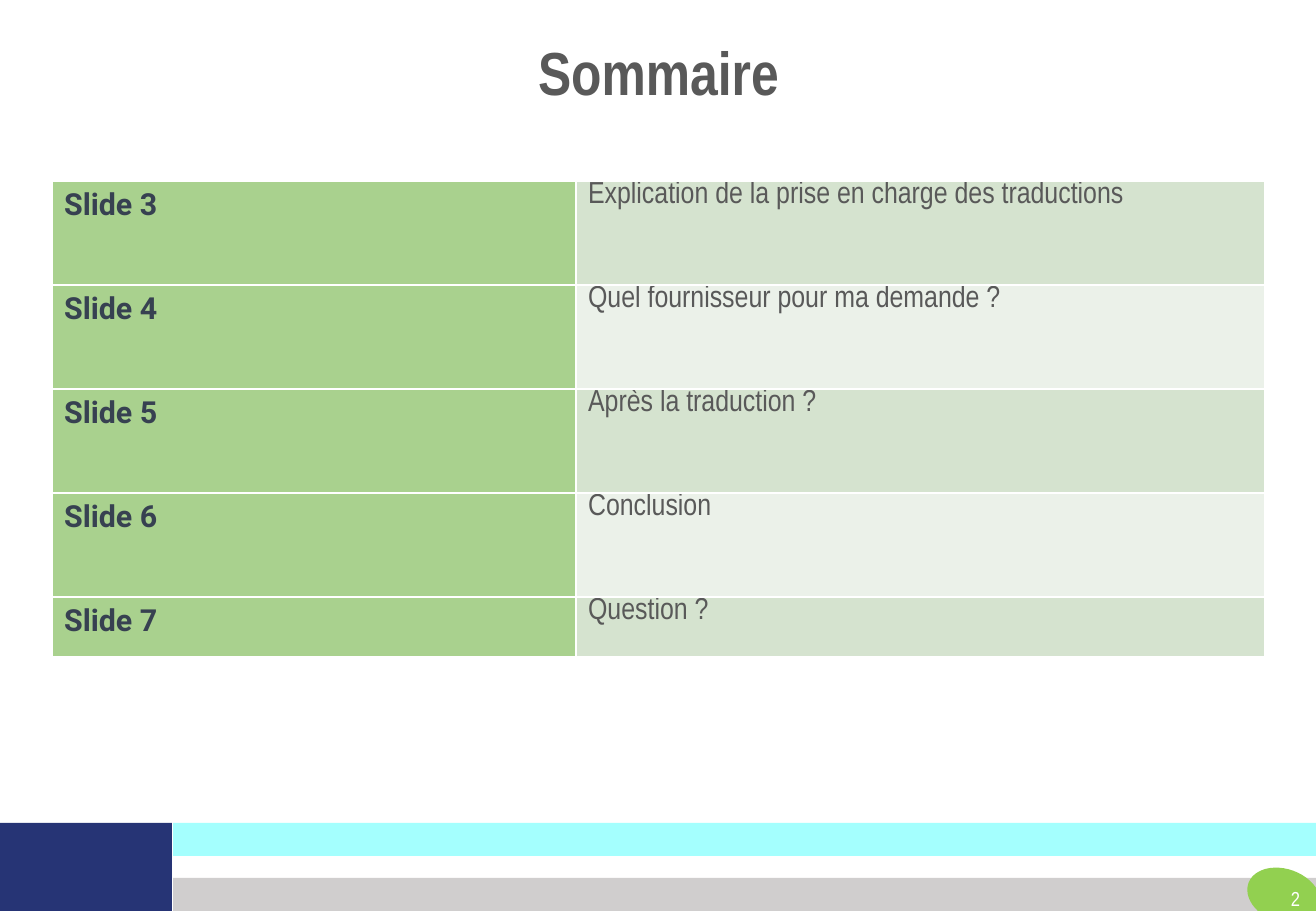
import pptx
import pptx.dml.color
import pptx.enum.shapes
import pptx.enum.text
import pptx.oxml
import pptx.oxml.ns
import pptx.util

RGBColor = pptx.dml.color.RGBColor
MSO_SHAPE = pptx.enum.shapes.MSO_SHAPE
PP_ALIGN = pptx.enum.text.PP_ALIGN
Pt = pptx.util.Pt

PX = 7526  # EMU per pixel, 121.5 pixels to the inch

WHITE = RGBColor(0xFF, 0xFF, 0xFF)
GREY_TEXT = RGBColor(0x59, 0x59, 0x59)
SLATE_TEXT = RGBColor(0x37, 0x41, 0x51)
GREY_BAND = RGBColor(0xD0, 0xCE, 0xCE)
CYAN_BAND = RGBColor(0xA4, 0xFF, 0xFE)
NAVY = RGBColor(0x26, 0x34, 0x75)
LIME = RGBColor(0x92, 0xD0, 0x50)
LABEL_FILL = RGBColor(0xA9, 0xD1, 0x8E)
TOPIC_FILLS = [RGBColor(0xD5, 0xE3, 0xCF), RGBColor(0xEB, 0xF1, 0xE9)]

TOPICS = [
    "Explication de la prise en charge des traductions",
    "Quel fournisseur pour ma demande ?",
    "Après la traduction ?",
    "Conclusion",
    "Question ?",
]
FIRST_SLIDE = 3
COLUMN_WIDTHS = [524, 689]
ROW_HEIGHTS = [104, 104, 104, 104, 60]


def write(frame, text, font_name, size, color, bold=False, align=PP_ALIGN.LEFT):
    """Fill the first paragraph of a text frame and return it."""
    para = frame.paragraphs[0]
    para.text = text
    para.alignment = align
    para.font.name = font_name
    para.font.size = Pt(size)
    para.font.bold = bold
    para.font.color.rgb = color
    return para


def add_text_box(left, top, width, height):
    box = page.shapes.add_textbox(left * PX, top * PX, width * PX, height * PX)
    box.text_frame.word_wrap = True
    box.text_frame.vertical_anchor = pptx.enum.text.MSO_ANCHOR.MIDDLE
    return box.text_frame


deck = pptx.Presentation()
deck.slide_width = 1316 * PX
deck.slide_height = 911 * PX
page = deck.slides.add_slide(deck.slide_layouts[6])

# Footer decoration
for kind, left, top, width, height, color, angle in [
    (MSO_SHAPE.RECTANGLE, 173, 878, 1145, 33, GREY_BAND, 0),
    (MSO_SHAPE.RECTANGLE, 173, 823, 1145, 33, CYAN_BAND, 0),
    (MSO_SHAPE.OVAL, 1247, 870, 74, 52, LIME, 20),
    (MSO_SHAPE.RECTANGLE, -10, 823, 182, 90, NAVY, 0),
]:
    shape = page.shapes.add_shape(kind, left * PX, top * PX, width * PX, height * PX)
    shape.shadow.inherit = False
    shape.rotation = angle
    shape.fill.solid()
    shape.fill.fore_color.rgb = color
    if kind == MSO_SHAPE.OVAL:
        shape.line.color.rgb = color
        shape.line.width = Pt(1)
    else:
        shape.line.fill.background()

# Title and page number
title = write(add_text_box(11, 11, 1295, 129), "Sommaire", "Arial Narrow", 36,
              GREY_TEXT, True, PP_ALIGN.CENTER)
title.line_spacing = 0.9
write(add_text_box(1244, 874, 68, 49), "2", "Arial Narrow", 12, WHITE, align=PP_ALIGN.RIGHT)

# Table of contents
contents = page.shapes.add_table(
    len(TOPICS), 2, 52 * PX, 181 * PX, sum(COLUMN_WIDTHS) * PX, sum(ROW_HEIGHTS) * PX
).table
for column, width in zip(contents.columns, COLUMN_WIDTHS):
    column.width = width * PX
for row, height in zip(contents.rows, ROW_HEIGHTS):
    row.height = height * PX

for index, topic in enumerate(TOPICS):
    label_cell, topic_cell = contents.cell(index, 0), contents.cell(index, 1)
    topic_cell.margin_top = 0
    for cell, color in [(label_cell, LABEL_FILL), (topic_cell, TOPIC_FILLS[index % 2])]:
        for side in ("lnL", "lnR", "lnT", "lnB"):
            cell._tc.get_or_add_tcPr().append(pptx.oxml.parse_xml(
                f'<a:{side} {pptx.oxml.ns.nsdecls("a")} w="12700"><a:solidFill>'
                f'<a:srgbClr val="{WHITE}"/></a:solidFill></a:{side}>'))
        cell.fill.solid()
        cell.fill.fore_color.rgb = color
    write(label_cell.text_frame, f"Slide {FIRST_SLIDE + index}", "Roboto", 18, SLATE_TEXT, True)
    write(topic_cell.text_frame, topic, "Arial Narrow", 18, GREY_TEXT)

deck.save("out.pptx")
